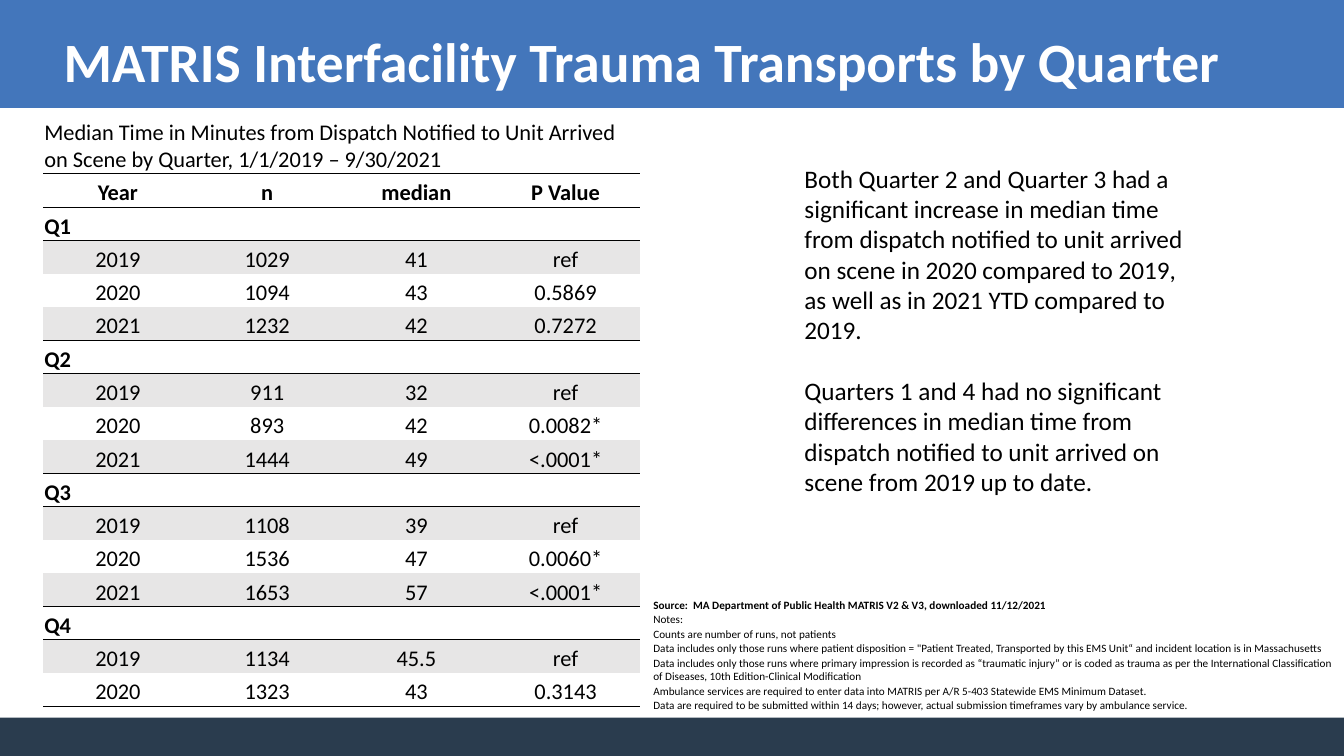
from pptx import Presentation
from pptx.dml.color import RGBColor
from pptx.enum.shapes import MSO_SHAPE
from pptx.enum.text import MSO_ANCHOR, MSO_AUTO_SIZE, PP_ALIGN
from pptx.oxml import parse_xml
from pptx.oxml.ns import nsdecls
from pptx.util import Inches, Pt

LEFT, CENTER = PP_ALIGN.LEFT, PP_ALIGN.CENTER
MIDDLE, BOTTOM = MSO_ANCHOR.MIDDLE, MSO_ANCHOR.BOTTOM
NO_FIT, RECT = MSO_AUTO_SIZE.NONE, MSO_SHAPE.RECTANGLE
PLAIN_STYLE = "{2D5ABB26-0587-4C30-8999-92F81FD0307C}"
FONT, BLACK, WHITE, STRIPE = "Calibri", "000000", "FFFFFF", "E7E6E6"

TITLE = "MATRIS Interfacility Trauma Transports by Quarter"
CAPTION = ("Median Time in Minutes from Dispatch Notified to Unit Arrived "
           "on Scene by Quarter, 1/1/2019 – 9/30/2021")
HEADER = ("Year", "n", "median", "P Value")
QUARTERS = {
    "Q1": [("2019", "1029", "41", "ref"), ("2020", "1094", "43", "0.5869"),
           ("2021", "1232", "42", "0.7272")],
    "Q2": [("2019", "911", "32", "ref"), ("2020", "893", "42", "0.0082*"),
           ("2021", "1444", "49", "<.0001*")],
    "Q3": [("2019", "1108", "39", "ref"), ("2020", "1536", "47", "0.0060*"),
           ("2021", "1653", "57", "<.0001*")],
    "Q4": [("2019", "1134", "45.5", "ref"), ("2020", "1323", "43", "0.3143")],
}
FINDINGS = [
    "Both Quarter 2 and Quarter 3 had a significant increase in median time from "
    "dispatch notified to unit arrived on scene in 2020 compared to 2019, as well "
    "as in 2021 YTD compared to 2019.",
    "Quarters 1 and 4 had no significant differences in median time from dispatch "
    "notified to unit arrived on scene from 2019 up to date.",
]
NOTES = [
    ("Source:  MA Department of Public Health MATRIS V2 & V3, downloaded 11/12/2021",),
    ("Notes:", ""),
    ("Counts are number of runs, not patients", ""),
    ("Data includes only those runs where patient disposition = \"Patient Treated, "
     "Transported by this EMS Unit“ and incident location is in Massachusetts",),
    ("Data includes only those runs where primary impression is recorded as "
     "“traumatic injury” or is coded as trauma as per the International "
     "Classification of Diseases, 10th Edition-Clinical Modification",),
    ("Ambulance services are required to enter data into MATRIS per A/R 5-403 "
     "Statewide EMS Minimum Dataset.",),
    ("Data are required to be submitted within 14 days; however, actual submission "
     "timeframes vary by ambulance service.",),
]
BARS = [(0, 1.07, "4376BB"), (7.12, 0.38, "2A3C4E")]


def rgb(value):
    return RGBColor.from_string(value)


def write(p, text, size=16, bold=False, color=BLACK, align=LEFT, before=0):
    p.alignment = align
    p.space_before = Pt(before)
    if not text:
        p._p.get_or_add_endParaRPr().set("sz", str(size * 100))
        return
    r = p.add_run()
    r.text = text
    r.font.name, r.font.size, r.font.bold = FONT, Pt(size), bold
    r.font.color.rgb = rgb(color)


def rule(cell, *sides):
    for side in sides:
        cell._tc.get_or_add_tcPr().append(parse_xml(
            f'<a:ln{side} {nsdecls("a")} w="{Pt(0.5)}"><a:solidFill>'
            f'<a:srgbClr val="{BLACK}"/></a:solidFill></a:ln{side}>'))


def make_table(s, left, top, widths, heights):
    frame = s.shapes.add_table(len(heights), len(widths), Inches(left), Inches(top),
                               Inches(sum(widths)), Inches(sum(heights)))
    table = frame.table
    table.first_row = table.horz_banding = False
    table._tbl.tblPr.find("{*}tableStyleId").text = PLAIN_STYLE
    for column, width in zip(table.columns, widths):
        column.width = Inches(width)
    for row, height in zip(table.rows, heights):
        row.height = Inches(height)
    return table


def fill_row(table, i, texts, sides="", fill=None, **style):
    cells = list(table.rows[i].cells)
    if len(texts) == 1:
        cells[0].merge(cells[-1])
    for j, cell in enumerate(cells):
        cell.margin_left = cell.margin_right = cell.margin_top = Inches(0.01)
        cell.margin_bottom = 0
        cell.vertical_anchor = BOTTOM
        rule(cell, *sides)
        if fill:
            cell.fill.solid()
            cell.fill.fore_color.rgb = rgb(fill)
        else:
            cell.fill.background()
        write(cell.text_frame.paragraphs[0], texts[j] if j < len(texts) else "", **style)


def add_quarters(s):
    rows = 2 + sum(1 + len(years) for years in QUARTERS.values())
    table = make_table(s, 0.43, 1.17, [1.48] * 4, [0.55] + [0.33] * (rows - 1))
    fill_row(table, 0, (CAPTION,), "B")
    fill_row(table, 1, HEADER, "TB", bold=True, align=CENTER)
    i = 2
    for quarter, years in QUARTERS.items():
        fill_row(table, i, (quarter,), "T", bold=True)
        for k, values in enumerate(years):
            fill_row(table, i + 1 + k, values, "B" if k == len(years) - 1 else "",
                     None if k % 2 else STRIPE, align=CENTER)
        i += 1 + len(years)


def main():
    prs = Presentation()
    prs.slide_width, prs.slide_height = Inches(13.33), Inches(7.5)
    s = prs.slides.add_slide(prs.slide_layouts[5])

    for top, height, color in BARS:
        bar = s.shapes.add_shape(RECT, 0, Inches(top), prs.slide_width, Inches(height))
        bar.shadow.inherit = False
        bar.fill.solid()
        bar.fill.fore_color.rgb = rgb(color)
        bar.line.fill.background()

    title = s.shapes.title
    s.shapes._spTree.append(title._element)
    title.left, title.top = Inches(0.53), Inches(0.12)
    title.width, title.height = Inches(12), Inches(0.96)
    tf = title.text_frame
    tf.auto_size, tf.vertical_anchor = NO_FIT, MIDDLE
    write(tf.paragraphs[0], TITLE, size=39.6, bold=True, color=WHITE)

    add_quarters(s)

    box = s.shapes.add_textbox(Inches(7.88), Inches(1.57), Inches(3.98), Inches(3.74))
    tf = box.text_frame
    tf.word_wrap = True
    for i, text in enumerate(FINDINGS):
        p = tf.add_paragraph() if i else tf.paragraphs[0]
        write(p, text, size=18, before=22 if i else 0)

    notes = make_table(s, 6.47, 5.93, [6.04, 0.82], [0.14] * len(NOTES))
    for i, texts in enumerate(NOTES):
        fill_row(notes, i, texts, size=8, bold=i == 0)

    prs.save("out.pptx")


if __name__ == "__main__":
    main()
